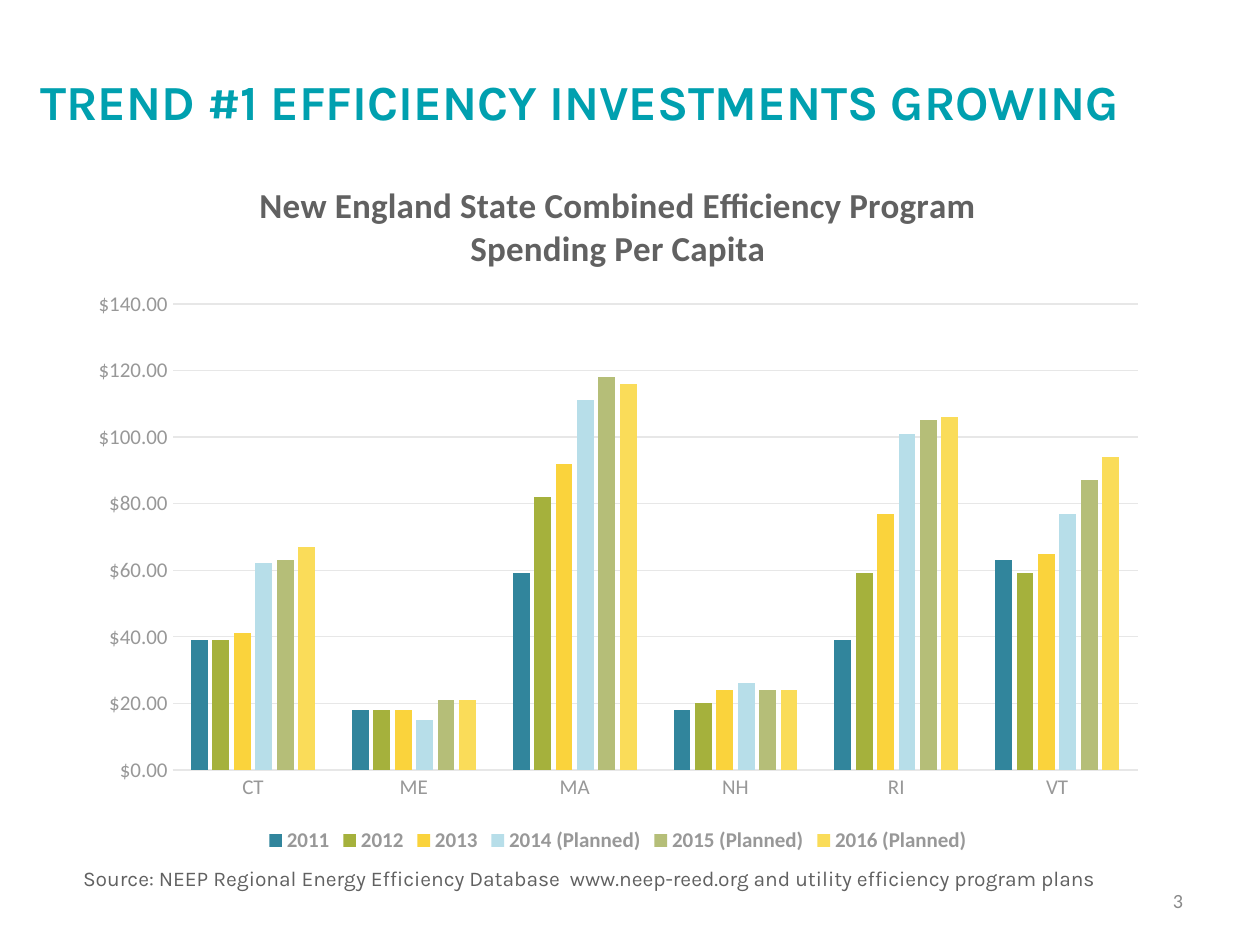
from pptx import Presentation
from pptx.chart.data import CategoryChartData
from pptx.dml.color import RGBColor
from pptx.enum.chart import XL_CHART_TYPE, XL_LEGEND_POSITION, XL_TICK_MARK
from pptx.enum.text import MSO_ANCHOR, PP_ALIGN
from pptx.util import Inches, Pt

COLUMN = XL_CHART_TYPE.COLUMN_CLUSTERED
BOTTOM = XL_LEGEND_POSITION.BOTTOM
NO_TICK = XL_TICK_MARK.NONE
TOP, MIDDLE = MSO_ANCHOR.TOP, MSO_ANCHOR.MIDDLE
LEFT, RIGHT = PP_ALIGN.LEFT, PP_ALIGN.RIGHT

TEAL, DARK, GRAY, PALE, RULE = "00A0AF", "616161", "989898", "898989", "E7E7E7"
STATES = ["CT", "ME", "MA", "NH", "RI", "VT"]
SPENDING = [
    ("2011", "31859C", [39, 18, 59, 18, 39, 63]),
    ("2012", "A5B13C", [39, 18, 82, 20, 59, 59]),
    ("2013", "FAD33C", [41, 18, 92, 24, 77, 65]),
    ("2014 (Planned)", "B7DEE9", [62, 15, 111, 26, 101, 77]),
    ("2015 (Planned)", "B5BE78", [63, 21, 118, 24, 105, 87]),
    ("2016 (Planned)", "FADC59", [67, 21, 116, 24, 106, 94]),
]


def color(code):
    return RGBColor.from_string(code)


class Deck:
    """Holds the style and the current slide, and adds elements to it."""

    head, body = "Karla", "Calibri"

    def __init__(self):
        self.show = Presentation()
        self.show.slide_width, self.show.slide_height = Inches(10), Inches(7.5)
        self.slide = self.show.slides.add_slide(self.show.slide_layouts[6])

    def style(self, font, name, size, code, bold=False):
        font.name, font.size, font.bold = name, Pt(size), bold
        font.color.rgb = color(code)

    def text(self, words, box, name, size, code, bold=False, align=LEFT, anchor=MIDDLE):
        frame = self.slide.shapes.add_textbox(*map(Inches, box)).text_frame
        frame.word_wrap = True
        frame.vertical_anchor = anchor
        frame.margin_left = frame.margin_right = Inches(0.11)
        frame.margin_top = frame.margin_bottom = Inches(0.06)
        frame.text = words
        para = frame.paragraphs[0]
        para.alignment = align
        self.style(para.runs[0].font, name, size, code, bold)

    def line(self, format):
        format.line.color.rgb = color(RULE)
        format.line.width = Pt(0.75)

    def chart(self, title, box, names, rows):
        data = CategoryChartData(number_format='"$"#,##0.00')
        data.categories = names
        for name, _, values in rows:
            data.add_series(name, values)
        chart = self.slide.shapes.add_chart(COLUMN, *map(Inches, box), data).chart
        self.style(chart.font, self.body, 10, DARK)

        chart.has_title = True
        frame = chart.chart_title.text_frame
        frame.text = title
        for para in frame.paragraphs:
            self.style(para.runs[0].font, self.body, 20, DARK, True)
        chart.chart_title.include_in_layout = False

        chart.has_legend = True
        chart.legend.position = BOTTOM
        chart.legend.include_in_layout = False
        self.style(chart.legend.font, self.body, 12, GRAY, True)

        for axis in (chart.category_axis, chart.value_axis):
            axis.major_tick_mark = axis.minor_tick_mark = NO_TICK
            self.style(axis.tick_labels.font, self.body, 12, GRAY)
        self.line(chart.category_axis.format)
        scale = chart.value_axis
        scale.minimum_scale, scale.maximum_scale, scale.major_unit = 0, 140, 20
        scale.format.line.fill.background()
        self.line(scale.major_gridlines.format)
        scale.tick_labels.number_format = '"$"#,##0.00'
        scale.tick_labels.number_format_is_linked = False

        plot = chart.plots[0]
        plot.gap_width, plot.overlap = 219, -27
        plot.vary_by_categories = False
        for series, (_, code, _) in zip(plot.series, rows):
            series.format.fill.solid()
            series.format.fill.fore_color.rgb = color(code)


def main():
    deck = Deck()
    deck.text("TREND #1 EFFICIENCY INVESTMENTS GROWING", (0.21, 0.52, 8.82, 0.57),
              deck.head, 28, TEAL, bold=True)
    deck.text("3", (7.17, 6.95, 2.33, 0.4), deck.body, 11.5, PALE, align=RIGHT)
    deck.chart("New England State Combined Efficiency Program\nSpending Per Capita",
               (0.61, 1.25, 8.59, 5.56), STATES, SPENDING)
    deck.text("Source: NEEP Regional Energy Efficiency Database  www.neep-reed.org"
              " and utility efficiency program plans",
              (0.55, 6.81, 8.73, 0.37), deck.head, 12, DARK, anchor=TOP)
    deck.show.save("out.pptx")


if __name__ == "__main__":
    main()
